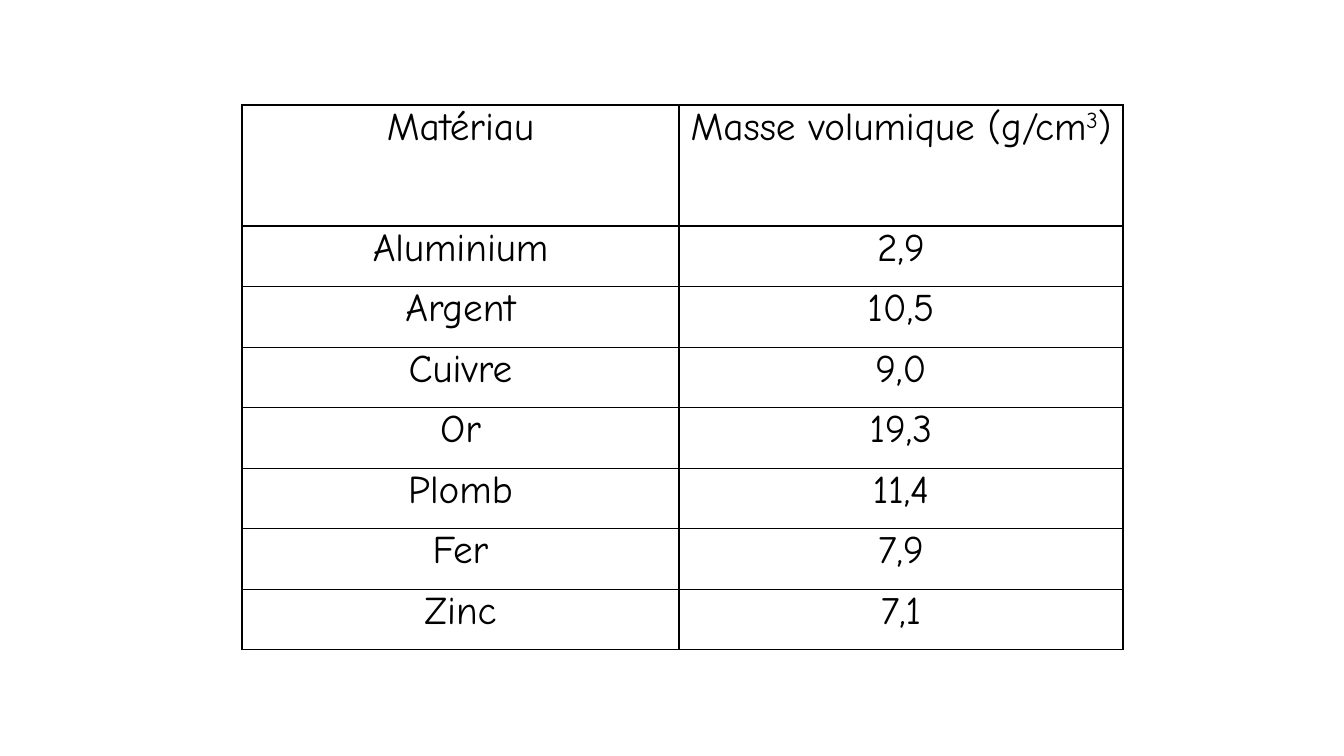
from lxml.etree import SubElement
from pptx import Presentation
from pptx.dml.color import RGBColor
from pptx.enum.text import PP_ALIGN
from pptx.oxml.ns import qn
from pptx.util import Emu, Pt

EMU_PER_PX = 914400 / 100.8
BLACK = RGBColor(0, 0, 0)
FONT_NAME = "Comic Neue"
HEADER_UNITS = 2

DENSITIES = [
    ("Matériau", "Masse volumique (g/cm³)"),
    ("Aluminium", "2,9"),
    ("Argent", "10,5"),
    ("Cuivre", "9,0"),
    ("Or", "19,3"),
    ("Plomb", "11,4"),
    ("Fer", "7,9"),
    ("Zinc", "7,1"),
]


def px(length):
    return Emu(round(length * EMU_PER_PX))


def draw_borders(cell):
    properties = cell._tc.get_or_add_tcPr()
    for side in ("lnL", "lnR", "lnT", "lnB"):
        line = SubElement(properties, qn(f"a:{side}"), w=str(Pt(1)))
        fill = SubElement(line, qn("a:solidFill"))
        SubElement(fill, qn("a:srgbClr"), val=str(BLACK))


def write_cell(cell, text):
    cell.margin_left = cell.margin_right = px(7)
    cell.margin_top = cell.margin_bottom = 0
    draw_borders(cell)
    cell.fill.background()
    para = cell.text_frame.paragraphs[0]
    para.alignment = PP_ALIGN.CENTER
    for piece in filter(None, text.partition("³")):
        span = para.add_run()
        span.text = piece
        span.font.name = FONT_NAME
        span.font.size = Pt(28)
        span.font.color.rgb = BLACK
        if piece == "³":
            span.text = "3"
            span._r.get_or_add_rPr().set("baseline", "30000")


def add_density_table(page, left, top, column_widths, height):
    frame = page.shapes.add_table(
        len(DENSITIES), len(column_widths),
        px(left), px(top), px(sum(column_widths)), px(height))
    table = frame.table
    table.first_row = False
    table.horz_banding = False
    for column, width in zip(table.columns, column_widths):
        column.width = px(width)
    unit = height / (len(DENSITIES) - 1 + HEADER_UNITS)
    for index, texts in enumerate(DENSITIES):
        table.rows[index].height = px(unit * (1 if index else HEADER_UNITS))
        for column_index, text in enumerate(texts):
            write_cell(table.cell(index, column_index), text)


def main():
    deck = Presentation()
    deck.slide_width = px(1344)
    deck.slide_height = px(756)
    page = deck.slides.add_slide(deck.slide_layouts[6])
    add_density_table(page, 242, 105, (437, 444), 545)
    deck.save("out.pptx")


if __name__ == "__main__":
    main()
